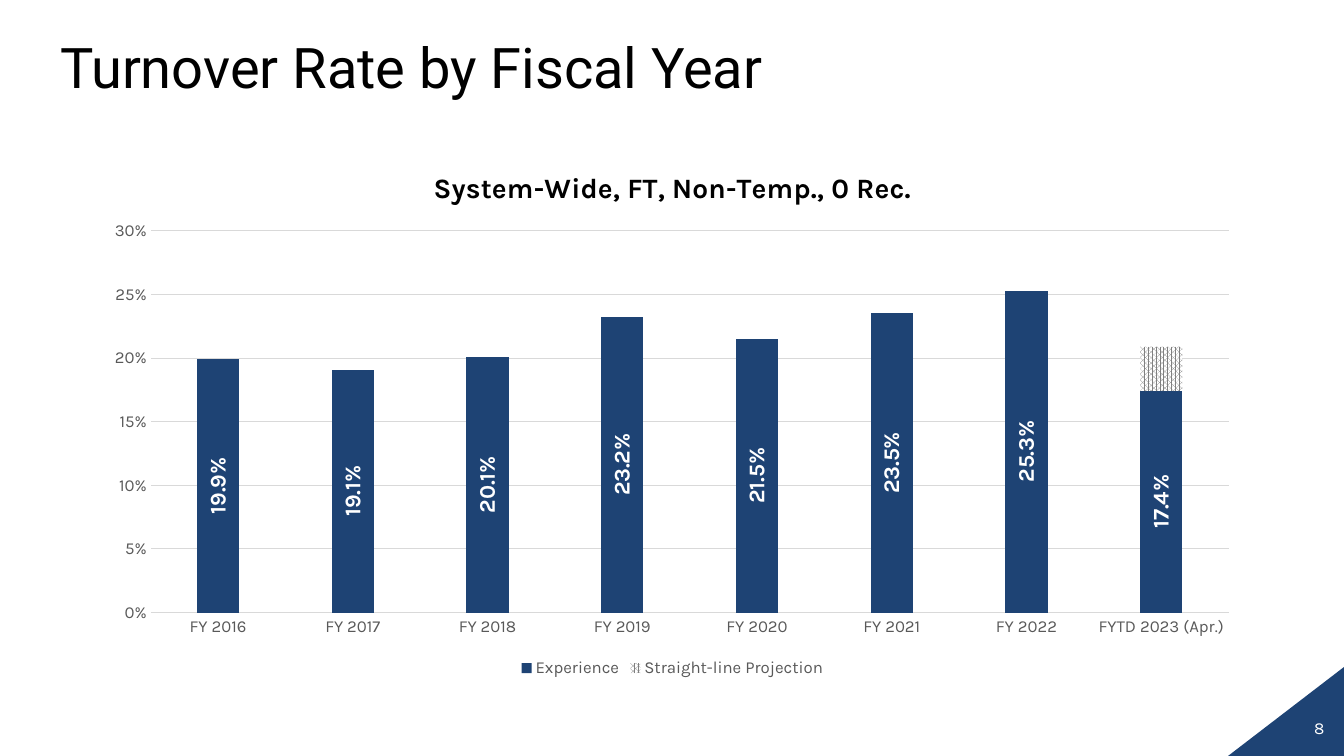
from dataclasses import dataclass

from lxml import etree
from pptx import Presentation
from pptx.chart.data import CategoryChartData as Data
from pptx.dml.color import RGBColor as RGB
from pptx.enum.chart import XL_CHART_TYPE as Kind, XL_LABEL_POSITION as Spot
from pptx.enum.chart import XL_LEGEND_POSITION as Side, XL_TICK_MARK as Tick
from pptx.enum.dml import MSO_PATTERN as Pat
from pptx.enum.shapes import MSO_SHAPE as Form
from pptx.enum.text import MSO_ANCHOR as Anchor, MSO_AUTO_SIZE as Fit, PP_ALIGN as Align
from pptx.oxml.ns import qn
from pptx.util import Cm, Pt


@dataclass(frozen=True)
class Theme:
    navy: RGB = RGB(0x1E, 0x43, 0x74)
    black: RGB = RGB(0, 0, 0)
    white: RGB = RGB(255, 255, 255)
    text: RGB = RGB(0x59, 0x59, 0x59)
    gray: RGB = RGB(0x80, 0x80, 0x80)
    rule: RGB = RGB(0xD9, 0xD9, 0xD9)
    head: str = "Roboto"
    body: str = "Karla"
    title: int = 40
    sub: int = 20
    label: int = 16
    small: int = 12


theme = Theme()


def style(font, size, color, name=theme.body, bold=False):
    font.size, font.name, font.bold = Pt(size), name, bold
    font.color.rgb = color


def place(shape, left, top, width, height):
    shape.left, shape.top = Cm(left), Cm(top)
    shape.width, shape.height = Cm(width), Cm(height)


deck = Presentation()
deck.slide_width, deck.slide_height = Cm(33.87), Cm(19.05)
slide = deck.slides.add_slide(deck.slide_layouts[5])
shapes = slide.shapes

# Corner triangle
corner = shapes.add_shape(Form.RIGHT_TRIANGLE, Cm(30.95), Cm(16.81), Cm(2.92), Cm(2.24))
corner.shadow.inherit = False
corner.fill.solid()
corner.fill.fore_color.rgb = theme.navy
corner.line.fill.background()
corner._element.spPr.find(qn("a:xfrm")).set("flipH", "1")

# Title
title = shapes.title
place(title, 1.27, 0.03, 31.32, 3.48)
frame = title.text_frame
frame.auto_size, frame.vertical_anchor = Fit.NONE, Anchor.MIDDLE
para = frame.paragraphs[0]
para.alignment, para.line_spacing = Align.LEFT, 0.9
run = para.add_run()
run.text = "Turnover Rate by Fiscal Year"
style(run.font, theme.title, theme.black, theme.head)

# Page number
page = shapes.add_textbox(Cm(30.71), Cm(17.96), Cm(2.92), Cm(1.09))
page.text_frame.word_wrap = True
para = page.text_frame.paragraphs[0]
para.alignment = Align.RIGHT
run = para.add_run()
run.text = "8"
style(run.font, theme.small, theme.white)

# Chart data
data = Data()
data.categories = [f"FY {year}" for year in range(2016, 2023)] + ["FYTD 2023 (Apr.)"]
rates = [0.199, 0.191, 0.201, 0.232, 0.215, 0.235, 0.253, 0.174]
data.add_series("Experience", rates)
data.add_series("Straight-line Projection", [None] * 7 + [0.035])
chart = shapes.add_chart(
    Kind.COLUMN_STACKED, Cm(2.34), Cm(3.73), Cm(29.21), Cm(13.46), data
).chart
style(chart.font, theme.small, theme.text)

# Chart title and legend
chart.has_title = True
run = chart.chart_title.text_frame.paragraphs[0].add_run()
run.text = "System-Wide, FT, Non-Temp., 0 Rec."
style(run.font, theme.sub, theme.black, bold=True)
chart.has_legend = True
chart.legend.position = Side.BOTTOM
chart.legend.include_in_layout = False
style(chart.legend.font, theme.small, theme.text)

# Axes
years, scale = chart.category_axis, chart.value_axis
for axis in (years, scale):
    axis.major_tick_mark = axis.minor_tick_mark = Tick.NONE
    style(axis.tick_labels.font, theme.small, theme.text)
scale.minimum_scale, scale.maximum_scale, scale.major_unit = 0, 0.3, 0.05
scale.tick_labels.number_format = "0%"
scale.tick_labels.number_format_is_linked = False
scale.format.line.fill.background()
for line in (years.format.line, scale.major_gridlines.format.line):
    line.color.rgb, line.width = theme.rule, Pt(0.75)

# Columns
plot = chart.plots[0]
plot.gap_width, plot.overlap, plot.vary_by_categories = 219, 100, False
actual, extra = plot.series
actual.format.fill.solid()
actual.format.fill.fore_color.rgb = theme.navy
fill = extra.format.fill
fill.patterned()
fill.pattern = Pat.PERCENT_75
fill.fore_color.rgb, fill.back_color.rgb = theme.gray, theme.white

# Upright value labels
labels = actual.data_labels
labels.show_value, labels.position = True, Spot.CENTER
labels.number_format, labels.number_format_is_linked = "0.0%", False
style(labels.font, theme.label, theme.white, bold=True)
body = labels._element.find(qn("c:txPr")).find(qn("a:bodyPr"))
body.set("rot", "-5400000")
body.set("vert", "horz")

# Fixed plot area, as shares of the chart
area = chart._chartSpace.chart.plotArea
for old in area.findall(qn("c:layout")):
    area.remove(old)
layout = etree.Element(qn("c:layout"))
area.insert(0, layout)
manual = etree.SubElement(layout, qn("c:manualLayout"))
for tag, val in (
    ("layoutTarget", "inner"), ("xMode", "edge"), ("yMode", "edge"),
    ("x", "0.05"), ("y", "0.155"), ("w", "0.93"), ("h", "0.715"),
):
    etree.SubElement(manual, qn(f"c:{tag}")).set("val", val)

deck.save("out.pptx")
